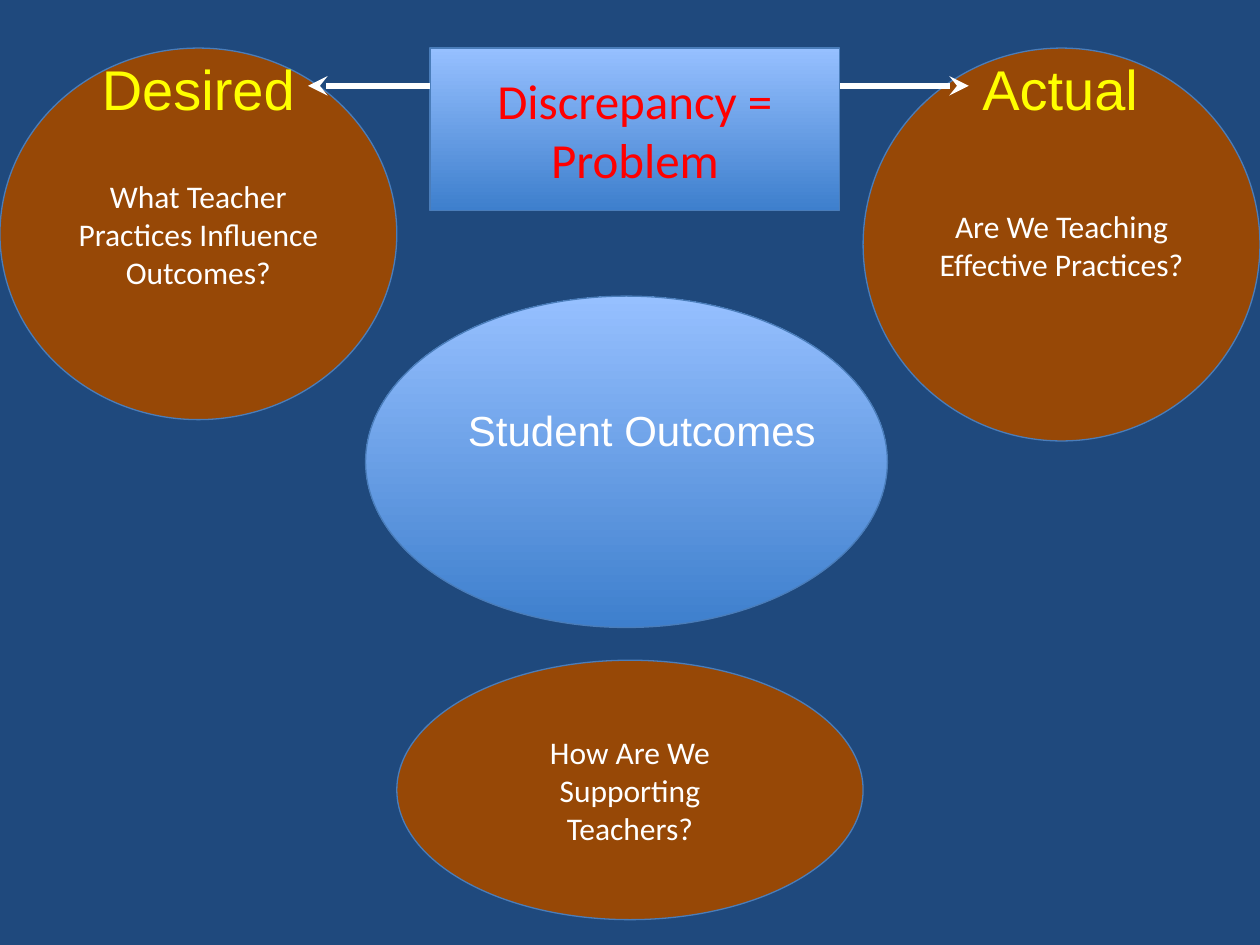
from lxml.etree import SubElement
from pptx import Presentation
from pptx.dml.color import RGBColor
from pptx.enum.shapes import MSO_CONNECTOR, MSO_SHAPE
from pptx.enum.text import MSO_ANCHOR, PP_ALIGN
from pptx.oxml.ns import qn
from pptx.util import Cm, Pt

NAVY, BROWN, OUTLINE = "1F497D", "974806", "4A7DBA"
DEEP_BLUE, PALE_BLUE = "3E7FCD", "96C0FF"
WHITE, YELLOW, RED = "FFFFFF", "FFFF00", "FF0000"
TOP = 0.97


def colour(value):
    """Turn a hex string into a colour."""
    return RGBColor.from_string(value)


def write(box, lines, size, font, ink, anchor=MSO_ANCHOR.MIDDLE):
    """Write centred lines into a box, one paragraph each."""
    frame = box.text_frame
    frame.word_wrap = True
    frame.vertical_anchor = anchor
    for index, line in enumerate(lines):
        para = frame.add_paragraph() if index else frame.paragraphs[0]
        para.alignment = PP_ALIGN.CENTER
        span = para.add_run()
        span.text = line
        span.font.size = Pt(size)
        span.font.name = font
        span.font.color.rgb = colour(ink)


def add_panel(page, kind, left, top, width, height, fill=None):
    """Add an outlined shape, filled with one colour or the blue gradient."""
    panel = page.shapes.add_shape(kind, Cm(left), Cm(top), Cm(width), Cm(height))
    panel.shadow.inherit = False
    panel.line.color.rgb = colour(OUTLINE)
    panel.line.width = Pt(0.75)
    if fill:
        panel.fill.solid()
        panel.fill.fore_color.rgb = colour(fill)
    else:
        panel.fill.gradient()
        panel.fill.gradient_angle = 90
        for stop, shade in zip(panel.fill.gradient_stops, (DEEP_BLUE, PALE_BLUE)):
            stop.color.rgb = colour(shade)
    return panel


def add_label(page, left, top, width, height, text, size, ink):
    """Add a top-anchored line of text."""
    label = page.shapes.add_textbox(Cm(left), Cm(top), Cm(width), Cm(height))
    write(label, [text], size, "Arial", ink, MSO_ANCHOR.TOP)


def add_outcomes(page, left, top, width, height):
    """Draw the central oval with its caption."""
    add_panel(page, MSO_SHAPE.OVAL, left, top, width, height)
    add_label(page, left + 0.63, top + 2.06, width - 0.64, 1.3,
              "Student Outcomes", 24, WHITE)


def add_question(page, left, top, width, height, lines):
    """Draw a brown oval holding a question."""
    oval = add_panel(page, MSO_SHAPE.OVAL, left, top, width, height, BROWN)
    write(oval, lines, 18, "Calibri", WHITE)


def add_arrow(page, start, end, level):
    """Draw a level white arrow."""
    arrow = page.shapes.add_connector(
        MSO_CONNECTOR.STRAIGHT, Cm(start), Cm(level), Cm(end), Cm(level))
    arrow.line.color.rgb = colour(WHITE)
    arrow.line.width = Pt(3.75)
    SubElement(arrow.line._get_or_add_ln(), qn("a:tailEnd"), type="stealth")
    SubElement(arrow._element.spPr, qn("a:effectLst"))


def add_discrepancy(page, left, top, width, height):
    """Draw the problem box and the arrows leaving its two sides."""
    problem = add_panel(page, MSO_SHAPE.RECTANGLE, left, top, width, height)
    write(problem, ["Discrepancy = Problem"], 28, "Calibri", RED)
    right, level = left + width, top + 0.76
    add_arrow(page, left, left - 2.46, level)
    add_arrow(page, right, right + 2.6, level)


def main():
    """Build the deck."""
    deck = Presentation()
    deck.slide_width, deck.slide_height = Cm(25.4), Cm(19.05)
    page = deck.slides.add_slide(deck.slide_layouts[6])
    page.background.fill.solid()
    page.background.fill.fore_color.rgb = colour(NAVY)

    add_outcomes(page, 7.37, 5.97, 10.52, 6.68)
    add_question(page, 0, TOP, 8, 7.49,
                 ["What Teacher Practices Influence Outcomes?"])
    add_question(page, 17.4, TOP, 8, 7.92,
                 ["Are We Teaching Effective Practices?"])
    add_question(page, 8, 13.31, 9.4, 5.23,
                 ["How Are We Supporting", "Teachers?"])
    add_label(page, 0, TOP, 8, 1.63, "Desired", 32, YELLOW)
    add_label(page, 18.39, TOP, 5.97, 1.63, "Actual", 32, YELLOW)
    add_discrepancy(page, 8.67, TOP, 8.26, 3.27)
    deck.save("out.pptx")


if __name__ == "__main__":
    main()
